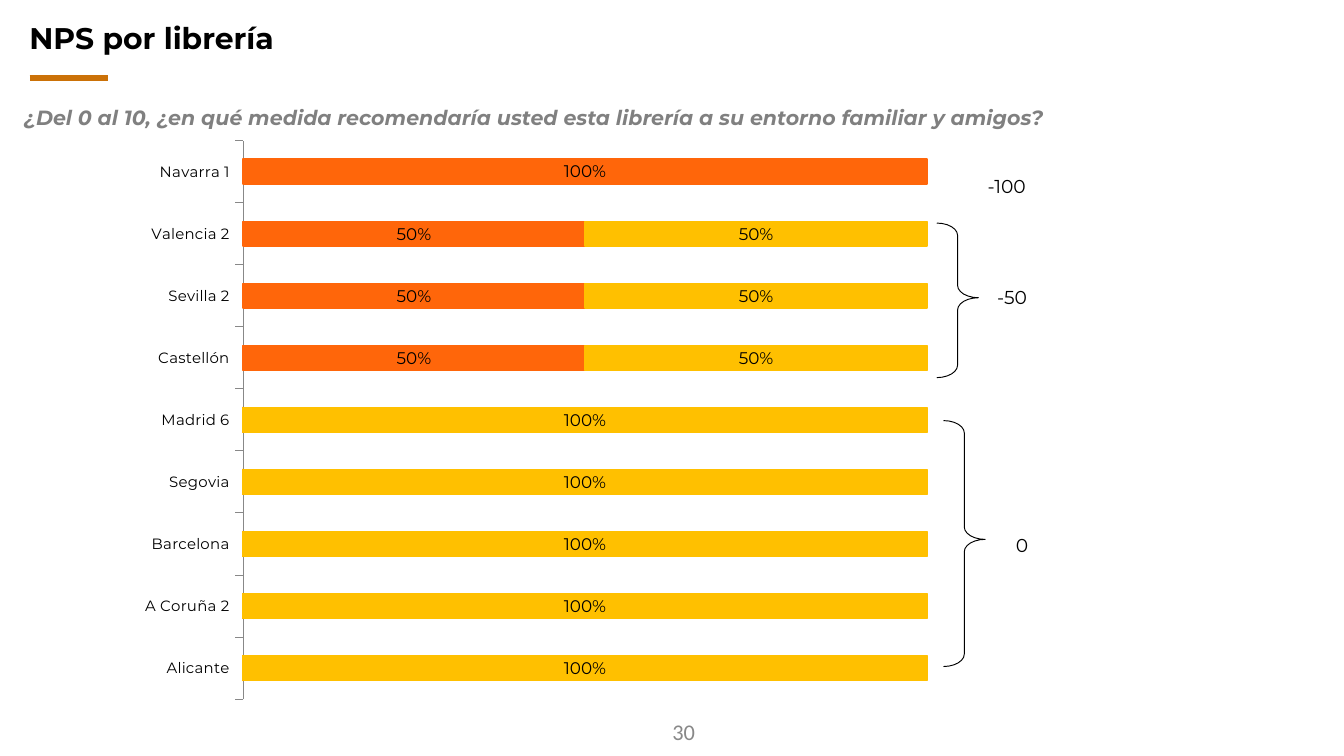
from lxml import etree
from pptx import Presentation
from pptx.chart.data import CategoryChartData
from pptx.dml.color import RGBColor
from pptx.enum.chart import XL_CHART_TYPE as ChartType, XL_LABEL_POSITION as LabelPosition
from pptx.enum.chart import XL_TICK_LABEL_POSITION as TickLabels, XL_TICK_MARK as TickMark
from pptx.enum.shapes import MSO_CONNECTOR as Connector, MSO_SHAPE as Shape
from pptx.enum.text import MSO_ANCHOR as Anchor, PP_ALIGN as Align
from pptx.oxml.ns import qn
from pptx.util import Inches, Pt

COLORS = {
    "black": "000000", "gray": "808080", "page": "888888", "accent": "CB7107",
    "detractor": "FF660A", "passive": "FFC000", "promoter": "F79521", "nps": "EC4B5F",
}
BODY_FONT = "Montserrat"
SCORE_FONT = {"name": BODY_FONT, "size": Pt(10)}

# text, (left, top, width, height), colour, font, paragraph format, frame format
TEXTS = [
    ("NPS por librería", (0.12, 0.13, 9.76, 0.47), "black",
     {"name": BODY_FONT, "size": Pt(16), "bold": True}, {"line_spacing": 0.9}, {}),
    ("¿Del 0 al 10, ¿en qué medida recomendaría usted esta librería a su entorno familiar y amigos?",
     (0.08, 0.73, 8.1, 0.29), "gray",
     {"name": BODY_FONT, "size": Pt(11), "bold": True, "italic": True}, {}, {}),
    ("-100", (7.25, 1.25, 0.52, 0.27), "black", SCORE_FONT, {}, {"word_wrap": False}),
    ("-50", (7.32, 2.08, 0.45, 0.27), "black", SCORE_FONT, {}, {"word_wrap": False}),
    ("0", (7.46, 3.92, 0.53, 0.27), "black", SCORE_FONT, {}, {}),
    ("30", (4.37, 5.29, 0.9, 0.3), "page", {"name": "Calibri", "size": Pt(12)},
     {"alignment": Align.RIGHT}, {"vertical_anchor": Anchor.MIDDLE}),
]
BRACES = [(6.97, 1.66, 0.31, 1.15), (7.02, 3.13, 0.31, 1.83)]
BRACE_ADJUSTMENTS = (0.298, 0.483)

CHART_BOX = (0.96, 0.96, 6.06, 4.33)
PLOT_LAYOUT = {"x": 0.14, "y": 0.02, "w": 0.84, "h": 0.96}
CATEGORIES = ["Alicante", "A Coruña 2", "Barcelona", "Segovia", "Madrid 6",
              "Castellón", "Sevilla 2", "Valencia 2", "Navarra 1"]
# name, values, colour, labelled
SERIES = [
    ("Series 1", [0] * 5 + [0.5] * 3 + [1], "detractor", True),
    ("Series 2", [1] * 5 + [0.5] * 3 + [0], "passive", True),
    ("Series 3", [0] * 9, "promoter", False),
    ("Series 4", [0] * 5 + [-0.5] * 3 + [-1], "nps", False),
]


def rgb(name):
    return RGBColor.from_string(COLORS[name])


def box(sizes):
    return [Inches(size) for size in sizes]


def apply(target, values):
    for name, value in values.items():
        setattr(target, name, value)


def style_line(line, color, width):
    line.color.rgb = rgb(color)
    line.width = Pt(width)


def add_text(slide, text, place, color, font, paragraph_format, frame_format):
    frame = slide.shapes.add_textbox(*box(place)).text_frame
    apply(frame, {"word_wrap": True, **frame_format})
    paragraph = frame.paragraphs[0]
    apply(paragraph, paragraph_format)
    run = paragraph.add_run()
    run.text = text
    apply(run.font, font)
    run.font.color.rgb = rgb(color)


def add_accent(slide):
    line = slide.shapes.add_connector(Connector.STRAIGHT, *box((0.22, 0.58, 0.8, 0.58)))
    style_line(line.line, "accent", 3)
    etree.SubElement(line._element.spPr, qn("a:effectLst"))


def add_brace(slide, place):
    shape = slide.shapes.add_shape(Shape.RIGHT_BRACE, *box(place))
    shape.shadow.inherit = False
    shape.fill.background()
    style_line(shape.line, "black", 0.5)
    for index, value in enumerate(BRACE_ADJUSTMENTS):
        shape.adjustments[index] = value


def fix_plot_area(chart):
    """Pin the inner plot area to fractions of the chart."""
    plot_area = chart._chartSpace.chart.plotArea
    for old in plot_area.findall(qn("c:layout")):
        plot_area.remove(old)
    layout = etree.Element(qn("c:layout"))
    plot_area.insert(0, layout)
    manual = etree.SubElement(layout, qn("c:manualLayout"))
    settings = {"layoutTarget": "inner", "xMode": "edge", "yMode": "edge", **PLOT_LAYOUT}
    for tag, value in settings.items():
        etree.SubElement(manual, qn(f"c:{tag}")).set("val", str(value))


def add_labels(series, values):
    """Label every bar of the series except the zero ones."""
    labels = series.data_labels
    apply(labels, {"show_value": True, "position": LabelPosition.CENTER,
                   "number_format": "0%", "number_format_is_linked": False})
    apply(labels.font, {"name": BODY_FONT, "size": Pt(9)})
    zeros = [index for index, value in enumerate(values) if value == 0]
    for position, index in enumerate(zeros):
        label = etree.Element(qn("c:dLbl"))
        etree.SubElement(label, qn("c:idx")).set("val", str(index))
        etree.SubElement(label, qn("c:delete")).set("val", "1")
        labels._element.insert(position, label)


def add_nps_chart(slide):
    data = CategoryChartData(number_format="0%")
    data.categories = CATEGORIES
    for name, values, _, _ in SERIES:
        data.add_series(name, values)
    chart = slide.shapes.add_chart(ChartType.BAR_STACKED, *box(CHART_BOX), data).chart
    apply(chart, {"has_legend": False, "has_title": False})
    apply(chart.font, {"name": "Calibri", "size": Pt(18)})
    chart.font.color.rgb = rgb("black")
    fix_plot_area(chart)

    apply(chart.value_axis, {"minimum_scale": 0, "maximum_scale": 1,
                             "has_major_gridlines": False, "visible": False})
    axis = chart.category_axis
    apply(axis, {"major_tick_mark": TickMark.OUTSIDE, "minor_tick_mark": TickMark.NONE,
                 "tick_label_position": TickLabels.LOW, "has_major_gridlines": False})
    apply(axis.tick_labels.font, {"name": BODY_FONT, "size": Pt(8)})
    style_line(axis.format.line, "page", 0.5)

    plot = chart.plots[0]
    apply(plot, {"gap_width": 150, "overlap": 100, "vary_by_categories": False})
    for series, (_, values, color, labelled) in zip(plot.series, SERIES):
        series.invert_if_negative = False
        series.format.fill.solid()
        series.format.fill.fore_color.rgb = rgb(color)
        if labelled:
            style_line(series.format.line, color, 0.75)
            add_labels(series, values)


def main():
    presentation = Presentation()
    width = Inches(10)
    apply(presentation, {"slide_width": width, "slide_height": width * 9 // 16})
    slide = presentation.slides.add_slide(presentation.slide_layouts[6])
    add_accent(slide)
    add_nps_chart(slide)
    for text in TEXTS:
        add_text(slide, *text)
    for place in BRACES:
        add_brace(slide, place)
    presentation.save("out.pptx")


if __name__ == "__main__":
    main()
